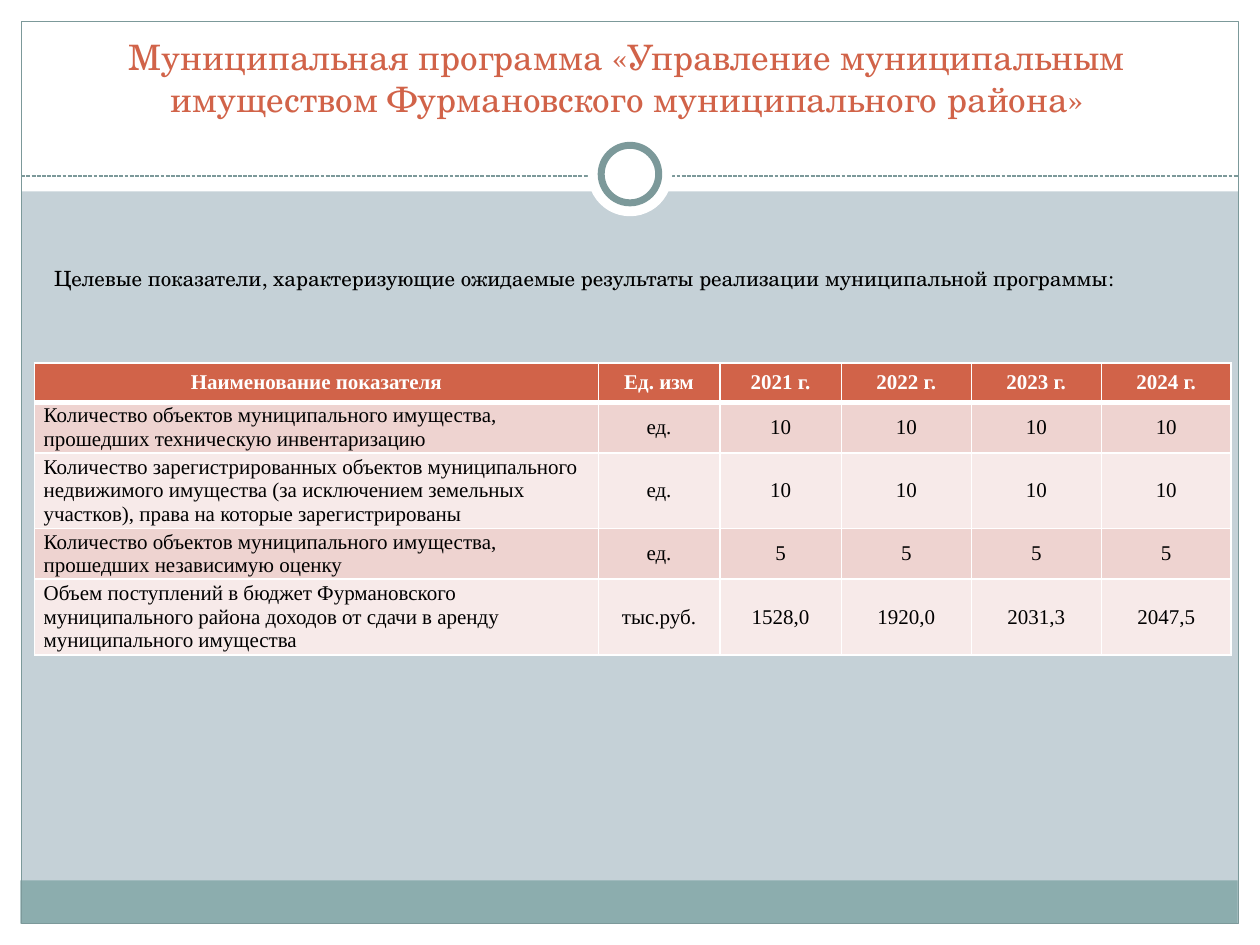
from lxml.etree import SubElement
from pptx import Presentation
from pptx.dml.color import RGBColor
from pptx.enum.dml import MSO_LINE
from pptx.enum.shapes import MSO_CONNECTOR, MSO_SHAPE
from pptx.enum.text import MSO_ANCHOR, PP_ALIGN
from pptx.oxml.ns import qn
from pptx.util import Cm, Pt

WHITE = RGBColor(0xFF, 0xFF, 0xFF)
BLACK = RGBColor(0, 0, 0)
SKY = RGBColor(0xC5, 0xD1, 0xD7)
TEAL = RGBColor(0x8C, 0xAD, 0xAE)
EDGE = RGBColor(0x7C, 0x99, 0x9A)
RUST = RGBColor(0xD1, 0x63, 0x49)
ROSE = RGBColor(0xEE, 0xD3, 0xD0)
PALE = RGBColor(0xF7, 0xEA, 0xE9)
SCHOOL = "TeX Gyre Schola"
TIMES = "Times New Roman"

deck = Presentation()
deck.slide_width, deck.slide_height = Cm(25.4), Cm(19.05)
slide = deck.slides.add_slide(deck.slide_layouts[6])
slide.background.fill.solid()
slide.background.fill.fore_color.rgb = SKY
shapes = slide.shapes


def draw(kind, box, fill=None, width=None):
    shape = shapes.add_shape(kind, *map(Cm, box))
    shape.shadow.inherit = False
    if fill is None:
        shape.fill.background()
    else:
        shape.fill.solid()
        shape.fill.fore_color.rgb = fill
    if width is None:
        shape.line.fill.background()
    else:
        shape.line.color.rgb = EDGE
        shape.line.width = Pt(width)


def style(frame, text, font, size, color, align, bold=False):
    frame.text = text
    frame.word_wrap = True
    para = frame.paragraphs[0]
    para.alignment = align
    face = para.runs[0].font
    face.name, face.size, face.bold = font, Pt(size), bold
    face.color.rgb = color


for box in [(0, 18.62, 25.4, 0.43), (0, 0, 25.4, 3.86),
            (0, 0, 0.43, 19.05), (24.97, 0, 0.43, 19.05)]:
    draw(MSO_SHAPE.RECTANGLE, box, WHITE)
draw(MSO_SHAPE.RECTANGLE, (0.41, 17.75, 24.54, 0.87), TEAL)
draw(MSO_SHAPE.RECTANGLE, (0.43, 0.43, 24.54, 18.19), width=0.75)

rule = shapes.add_connector(MSO_CONNECTOR.STRAIGHT, Cm(0.43), Cm(3.55), Cm(24.97), Cm(3.55))
rule.line.color.rgb = EDGE
rule.line.width = Pt(0.75)
rule.line.dash_style = MSO_LINE.SQUARE_DOT
SubElement(rule.element.spPr, qn("a:effectLst"))

draw(MSO_SHAPE.OVAL, (11.85, 2.66, 1.7, 1.7), WHITE)
draw(MSO_SHAPE.OVAL, (12.12, 2.93, 1.16, 1.16), WHITE, 4)

title = shapes.add_textbox(Cm(0.79), Cm(1.19), Cm(23.7), Cm(1.35)).text_frame
title.vertical_anchor = MSO_ANCHOR.BOTTOM
style(title, "Муниципальная программа «Управление муниципальным имуществом "
      "Фурмановского муниципального района»", SCHOOL, 20, RUST, PP_ALIGN.CENTER)

intro = shapes.add_textbox(Cm(0.84), Cm(5.23), Cm(23.62), Cm(0.75)).text_frame
style(intro, "Целевые показатели, характеризующие ожидаемые результаты реализации "
      "муниципальной программы:", SCHOOL, 12, BLACK, PP_ALIGN.LEFT)

data = [
    ("Наименование показателя", "Ед. изм", "2021 г.", "2022 г.", "2023 г.", "2024 г."),
    ("Количество объектов муниципального имущества, прошедших техническую инвентаризацию",
     "ед.", "10", "10", "10", "10"),
    ("Количество зарегистрированных объектов муниципального недвижимого имущества "
     "(за исключением земельных участков), права на которые зарегистрированы",
     "ед.", "10", "10", "10", "10"),
    ("Количество объектов муниципального имущества, прошедших независимую оценку",
     "ед.", "5", "5", "5", "5"),
    ("Объем поступлений в бюджет Фурмановского муниципального района доходов "
     "от сдачи в аренду муниципального имущества",
     "тыс.руб.", "1528,0", "1920,0", "2031,3", "2047,5"),
]
widths = [11.36, 2.45, 2.45, 2.62, 2.62, 2.62]
heights = [0.79, 1.02, 1.42, 1.02, 1.42]
table = shapes.add_table(len(data), len(widths), Cm(0.7), Cm(7.32),
                         Cm(sum(widths)), Cm(sum(heights))).table
for col, width in zip(table.columns, widths):
    col.width = Cm(width)

for i, line in enumerate(data):
    table.rows[i].height = Cm(heights[i])
    head = i == 0
    for j, text in enumerate(line):
        cell = table.cell(i, j)
        cell.margin_left = cell.margin_right = Cm(0.18)
        cell.margin_top = cell.margin_bottom = 0
        cell.vertical_anchor = MSO_ANCHOR.MIDDLE
        align = PP_ALIGN.CENTER if head or j else PP_ALIGN.LEFT
        style(cell.text_frame, text, TIMES, 12, WHITE if head else BLACK, align, head)
        props = cell._tc.get_or_add_tcPr()
        for side in "LRTB":
            thick = (i, side) in [(0, "B"), (1, "T")]
            edge = SubElement(props, qn("a:ln" + side), w=str(Pt(3 if thick else 1)))
            paint = SubElement(edge, qn("a:solidFill"))
            SubElement(paint, qn("a:srgbClr"), val=str(WHITE))
        cell.fill.solid()
        cell.fill.fore_color.rgb = RUST if head else (PALE, ROSE)[i % 2]

deck.save("out.pptx")
